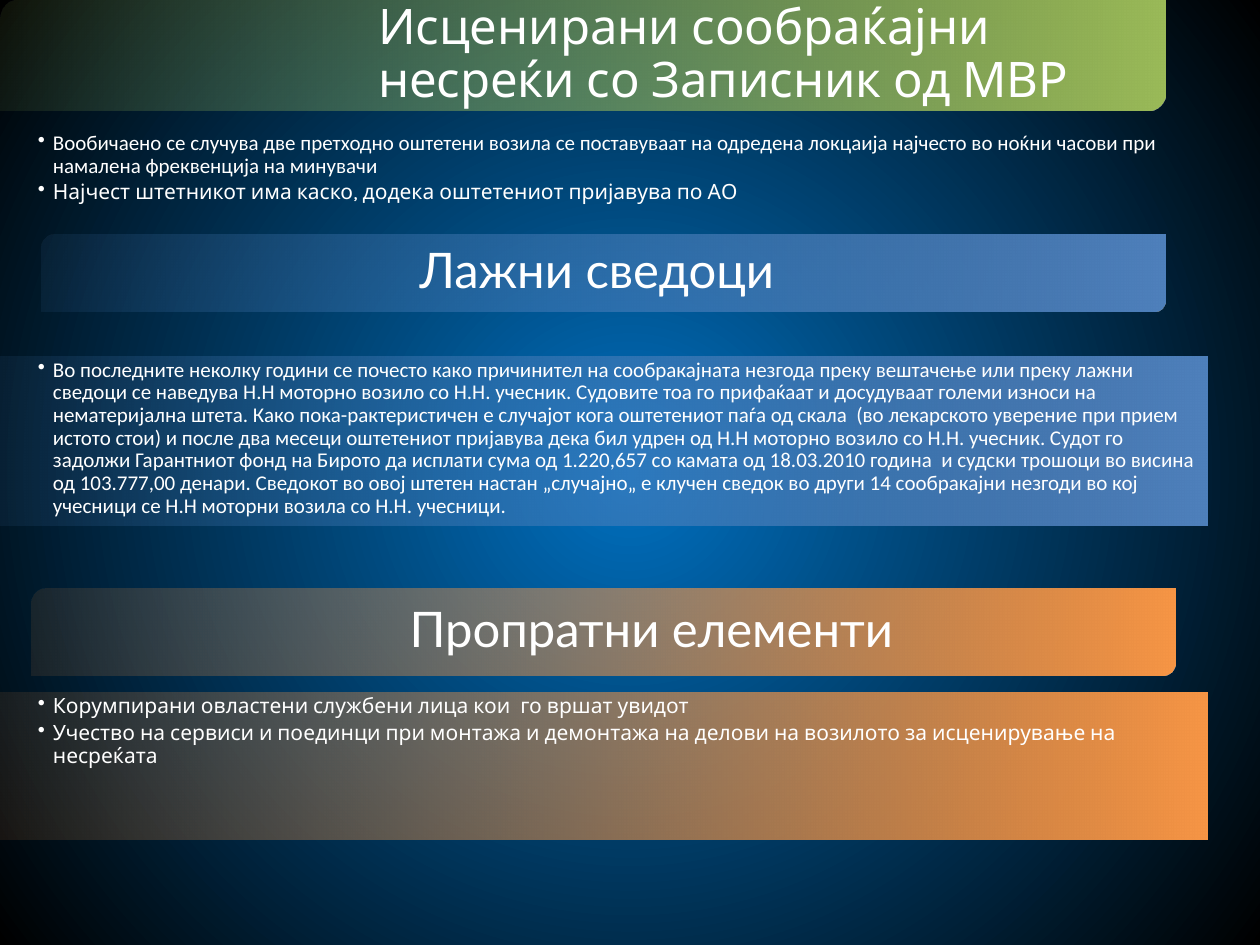
from dataclasses import dataclass
from typing import Optional

from lxml.etree import SubElement
from pptx import Presentation
from pptx.dml.color import RGBColor
from pptx.enum.shapes import MSO_SHAPE
from pptx.enum.text import MSO_ANCHOR
from pptx.oxml.ns import qn
from pptx.util import Inches, Pt

WHITE = RGBColor(0xFF, 0xFF, 0xFF)
BLACK = RGBColor(0x00, 0x00, 0x00)
DEEP_BLUE = RGBColor(0x00, 0x70, 0xC0)
GREEN = RGBColor(0x9B, 0xBB, 0x59)
BLUE = RGBColor(0x4F, 0x81, 0xBD)
ORANGE = RGBColor(0xF7, 0x96, 0x46)


@dataclass
class Style:
    size: int
    space_after: float
    anchor: MSO_ANCHOR
    insets: tuple[float, float, float, float]
    bulleted: bool


@dataclass
class Line:
    text: str
    font: str


@dataclass
class Block:
    left: float
    top: float
    width: float
    height: float
    style: Style
    lines: list[Line]
    color: Optional[RGBColor] = None


HEADING = Style(28, 9.8, MSO_ANCHOR.MIDDLE, (3, 0.12, 0.12, 0.12), False)
BODY = Style(12, 2.4, MSO_ANCHOR.TOP, (0.3, 0.02, 0.09, 0.02), True)

BLOCKS = [
    # Staged accidents
    Block(0, 0, 9.25, 0.88, HEADING, [
        Line("Исценирани сообраќајни несреќи со Записник од МВР", "Karla"),
    ], GREEN),
    Block(0, 1.03, 9.58, 1.16, BODY, [
        Line("Вообичаено се случува две претходно оштетени возила се поставуваат на "
             "одредена локцаија најчесто во ноќни часови при намалена фреквенција "
             "на минувачи", "Calibri"),
        Line("Најчест штетникот има каско, додека оштетениот пријавува по АО", "Karla"),
    ]),
    # False witnesses
    Block(0.33, 1.86, 8.92, 0.61, HEADING, [Line("Лажни сведоци", "Lato")], BLUE),
    Block(0, 2.83, 9.58, 1.34, BODY, [
        Line("Во последните неколку години се почесто како причинител на сообракајната "
             "незгода преку вештачење или преку лажни сведоци се наведува Н.Н моторно "
             "возило со Н.Н. учесник. Судовите тоа го прифаќаат и досудуваат големи "
             "износи на нематеријална штета. Како пока-рактеристичен е случајот кога "
             "оштетениот паѓа од скала  (во лекарското уверение при прием истото стои) "
             "и после два месеци оштетениот пријавува дека бил удрен од Н.Н моторно "
             "возило со Н.Н. учесник. Судот го задолжи Гарантниот фонд на Бирото да "
             "исплати сума од 1.220,657 со камата од 18.03.2010 година  и судски "
             "трошоци во висина од 103.777,00 денари. Сведокот во овој штетен настан "
             "„случајно„ е клучен сведок во други 14 сообракајни незгоди во кој "
             "учесници се Н.Н моторни возила со Н.Н. учесници.", "Calibri"),
    ], BLUE),
    # Accompanying elements
    Block(0.25, 4.67, 9.08, 0.69, HEADING, [Line("Пропратни елементи", "Lato")], ORANGE),
    Block(0, 5.5, 9.58, 1.16, BODY, [
        Line("Корумпирани овластени службени лица кои  го вршат увидот", "Karla"),
        Line("Учество на сервиси и поединци при монтажа и демонтажа на делови на "
             "возилото за исценирување на несреќата", "Karla"),
    ], ORANGE),
]


def set_gradient(fill, start: RGBColor, end: RGBColor) -> None:
    fill.gradient()
    for stop, color in zip(fill.gradient_stops, (start, end)):
        stop.color.rgb = color


def paint_background(page) -> None:
    set_gradient(page.background.fill, DEEP_BLUE, BLACK)
    gradient = next(page.element.iter(qn("a:gradFill")))
    gradient.remove(gradient.find(qn("a:lin")))
    circle = SubElement(gradient, qn("a:path"), path="circle")
    SubElement(circle, qn("a:fillToRect"), l="50000", t="50000", r="50000", b="50000")


def add_panel(group, block: Block, area: tuple) -> None:
    kind = MSO_SHAPE.RECTANGLE if block.style.bulleted else MSO_SHAPE.ROUND_2_DIAG_RECTANGLE
    panel = group.shapes.add_shape(kind, *area)
    panel.shadow.inherit = False
    panel.line.fill.background()
    set_gradient(panel.fill, block.color, block.color)
    panel.fill.gradient_angle = 0
    # The left end is almost transparent
    first_color = next(panel.element.iter(qn("a:srgbClr")))
    SubElement(first_color, qn("a:alpha"), val="10000")


def add_bullet(para) -> None:
    para.level = 1
    properties = para._p.get_or_add_pPr()
    properties.set("marL", str(Inches(0.12)))
    properties.set("indent", str(Inches(-0.12)))
    SubElement(properties, qn("a:buChar"), char="•")


def add_text(group, block: Block, area: tuple) -> None:
    style = block.style
    frame = group.shapes.add_textbox(*area).text_frame
    left, top, right, bottom = map(Inches, style.insets)
    frame_format = {
        "word_wrap": True, "vertical_anchor": style.anchor,
        "margin_left": left, "margin_top": top,
        "margin_right": right, "margin_bottom": bottom,
    }
    for name, value in frame_format.items():
        setattr(frame, name, value)
    for index, line in enumerate(block.lines):
        para = frame.add_paragraph() if index else frame.paragraphs[0]
        para.line_spacing = 0.9
        para.space_after = Pt(style.space_after)
        if style.bulleted:
            add_bullet(para)
        span = para.add_run()
        span.text = line.text
        for name, value in {"name": line.font, "size": Pt(style.size)}.items():
            setattr(span.font, name, value)
        span.font.color.rgb = WHITE


def main() -> None:
    deck = Presentation()
    deck.slide_width, deck.slide_height = Inches(10), Inches(7.5)
    page = deck.slides.add_slide(deck.slide_layouts[6])
    paint_background(page)

    group = page.shapes.add_group_shape()
    for block in BLOCKS:
        area = tuple(map(Inches, (block.left, block.top, block.width, block.height)))
        if block.color is not None:
            add_panel(group, block, area)
        add_text(group, block, area)

    deck.save("out.pptx")


if __name__ == "__main__":
    main()
